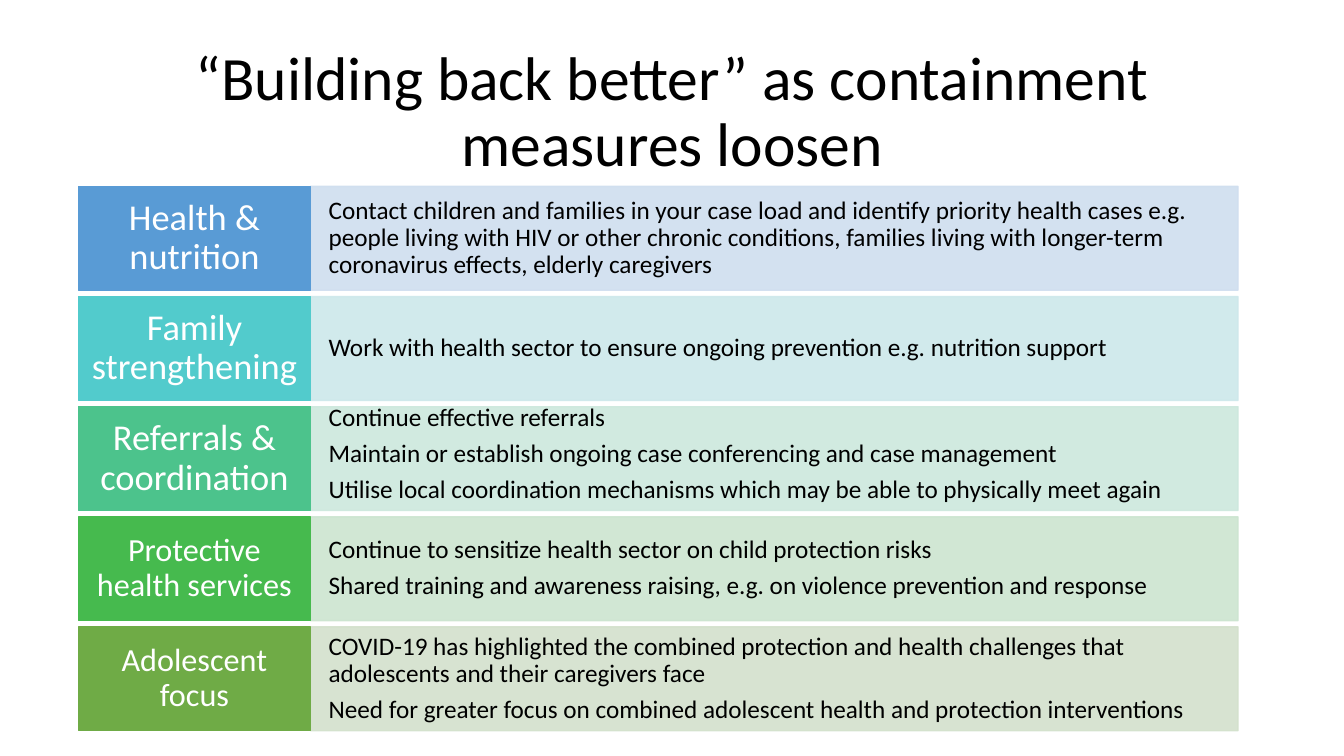
import pptx
import pptx.dml.color
import pptx.enum.shapes
import pptx.enum.text
import pptx.oxml
import pptx.oxml.ns
import pptx.util
from pptx.util import Inches

FIRST_TOP, LAST_TOP, ROW_HEIGHT = 1.85, 6.22, 1.03
LABEL_LEFT, LABEL_WIDTH, DETAIL_WIDTH = 0.78, 2.3, 9.2

# Label, label size, label colour, detail colour, detail paragraphs
ROWS = [
    ("Health & nutrition", 26, "599BD5", "CFDEEF", [
        "Contact children and families in your case load and identify priority "
        "health cases e.g. people living with HIV or other chronic conditions, "
        "families living with longer-term coronavirus effects, elderly caregivers"]),
    ("Family strengthening", 26, "52CBCC", "CDE8EB", [
        "Work with health sector to ensure ongoing prevention e.g. nutrition support"]),
    ("Referrals & coordination", 26, "4CC38C", "CCE8DD", [
        "Continue effective referrals",
        "Maintain or establish ongoing case conferencing and case management",
        "Utilise local coordination mechanisms which may be able to physically meet again"]),
    ("Protective health services", 23, "46BA4E", "CCE5D0", [
        "Continue to sensitize health sector on child protection risks",
        "Shared training and awareness raising, e.g. on violence prevention and response"]),
    ("Adolescent focus", 23, "6FAB46", "D3E1CC", [
        "COVID-19 has highlighted the combined protection and health challenges "
        "that adolescents and their caregivers face",
        "Need for greater focus on combined adolescent health and protection interventions"]),
]


def colour(hex_string):
    return pptx.dml.color.RGBColor.from_string(hex_string)


class SlideBuilder:
    font = "Calibri"
    left = pptx.enum.text.PP_ALIGN.LEFT
    centre = pptx.enum.text.PP_ALIGN.CENTER

    def __init__(self, presentation):
        self.slide = presentation.slides.add_slide(presentation.slide_layouts[5])

    def set_text(self, shape, lines, size, text_colour, alignment, insets):
        frame = shape.text_frame
        frame.text = "\n".join(lines)
        frame.word_wrap = True
        frame.auto_size = pptx.enum.text.MSO_AUTO_SIZE.NONE
        frame.vertical_anchor = pptx.enum.text.MSO_ANCHOR.MIDDLE
        (frame.margin_left, frame.margin_top,
         frame.margin_right, frame.margin_bottom) = map(Inches, insets)
        for index, paragraph in enumerate(frame.paragraphs):
            paragraph.alignment = alignment
            paragraph.line_spacing = 0.9
            paragraph.space_before = pptx.util.Pt(6.3 if index else 0)
            for run in paragraph.runs:
                run.font.name = self.font
                run.font.size = pptx.util.Pt(size)
                run.font.color.rgb = colour(text_colour)

    def title(self, text, left, top, width, height):
        shape = self.slide.shapes.title
        shape.left, shape.top = Inches(left), Inches(top)
        shape.width, shape.height = Inches(width), Inches(height)
        self.set_text(shape, [text], 44, "000000", self.centre, (0.1, 0.05, 0.1, 0.05))

    def box(self, left, top, width, fill, opacity=100):
        shape = self.slide.shapes.add_shape(
            pptx.enum.shapes.MSO_SHAPE.RECTANGLE,
            Inches(left), Inches(top), Inches(width), Inches(ROW_HEIGHT))
        shape.shadow.inherit = False
        shape.fill.solid()
        shape.fill.fore_color.rgb = colour(fill)
        shape.line.color.rgb = colour(fill)
        shape.line.width = pptx.util.Pt(1)
        if opacity < 100:
            # Transparency of both fill and outline
            for element in shape.element.spPr.findall(".//" + pptx.oxml.ns.qn("a:srgbClr")):
                element.append(pptx.oxml.parse_xml(
                    f'<a:alpha {pptx.oxml.ns.nsdecls("a")} val="{opacity * 1000}"/>'))
        return shape

    def label(self, text, size, top, fill):
        shape = self.box(LABEL_LEFT, top, LABEL_WIDTH, fill)
        self.set_text(shape, [text], size, "FFFFFF", self.centre, (0.12, 0.1, 0.12, 0.1))

    def detail(self, lines, top, fill):
        shape = self.box(LABEL_LEFT + LABEL_WIDTH, top, DETAIL_WIDTH, fill, 90)
        # Three paragraphs sit slightly above the middle of the row
        bottom = 0.09 if len(lines) > 2 else 0
        self.set_text(shape, lines, 18, "000000", self.left, (0.18, 0, 0.18, bottom))


def main():
    presentation = pptx.Presentation()
    presentation.slide_width = Inches(13.33)
    presentation.slide_height = Inches(7.5)
    builder = SlideBuilder(presentation)

    # Title
    builder.title("“Building back better” as containment measures loosen",
                  0.92, 0.4, 11.5, 1.45)

    # Rows of labels and details
    pitch = (LAST_TOP - FIRST_TOP) / (len(ROWS) - 1)
    for index, (label, size, label_fill, detail_fill, lines) in enumerate(ROWS):
        top = FIRST_TOP + index * pitch
        builder.detail(lines, top, detail_fill)
        builder.label(label, size, top, label_fill)

    presentation.save("out.pptx")


if __name__ == "__main__":
    main()
